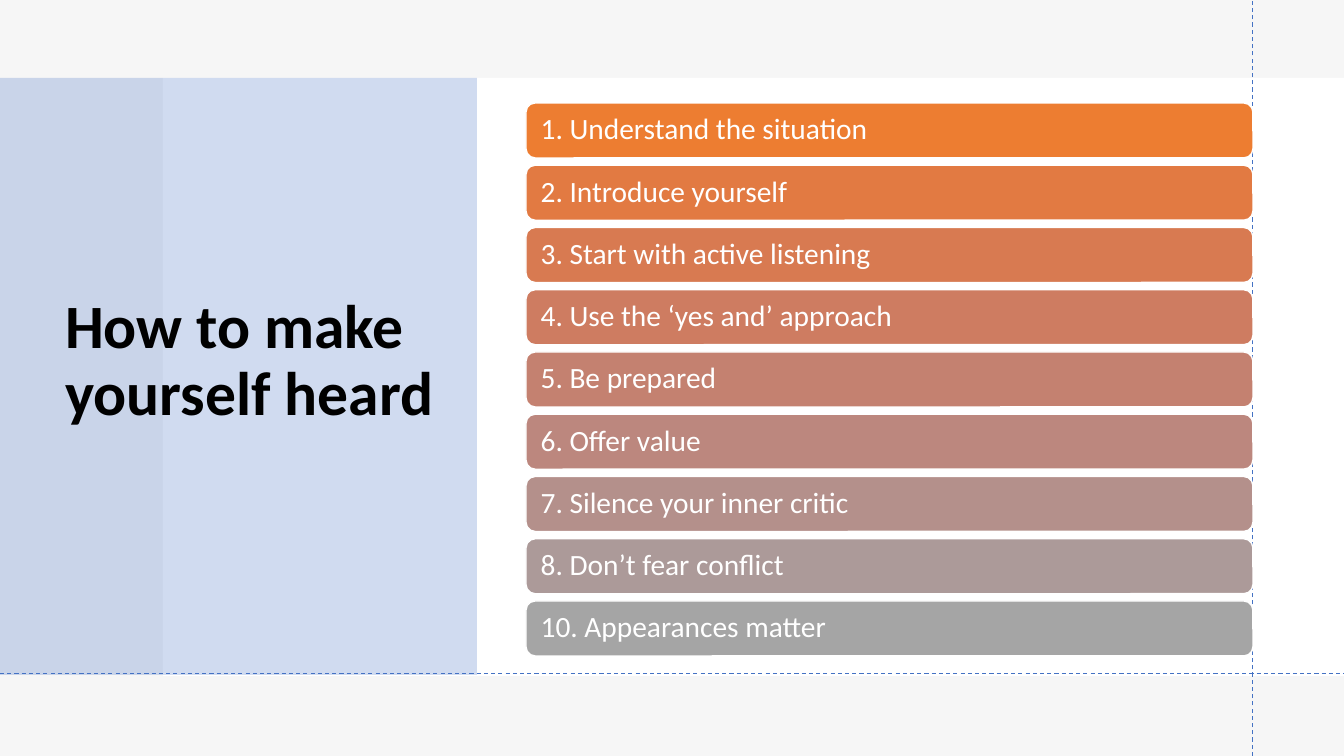
import pptx
import pptx.dml.color
import pptx.enum.dml
import pptx.enum.shapes
import pptx.enum.text
import pptx.oxml
import pptx.oxml.ns
import pptx.util

RGBColor = pptx.dml.color.RGBColor
ShapeType = pptx.enum.shapes.MSO_SHAPE
EMU_PER_PX = 914400 / 100.8
SLIDE_BOX = (0, 0, 1344, 756)

BLACK = RGBColor(0x00, 0x00, 0x00)
WHITE = RGBColor(0xFF, 0xFF, 0xFF)
PALE_GREY = RGBColor(0xF6, 0xF6, 0xF6)
BLUE = RGBColor(0x44, 0x72, 0xC4)

STEPS = [
    ("1. Understand the situation", RGBColor(0xED, 0x7D, 0x31)),
    ("2. Introduce yourself", RGBColor(0xE2, 0x7A, 0x42)),
    ("3. Start with active listening", RGBColor(0xD8, 0x7A, 0x51)),
    ("4. Use the ‘yes and’ approach", RGBColor(0xCE, 0x7C, 0x61)),
    ("5. Be prepared", RGBColor(0xC4, 0x81, 0x70)),
    ("6. Offer value", RGBColor(0xBC, 0x87, 0x7E)),
    ("7. Silence your inner critic", RGBColor(0xB4, 0x90, 0x8B)),
    ("8. Don’t fear conflict", RGBColor(0xAC, 0x9A, 0x99)),
    ("10. Appearances matter", RGBColor(0xA5, 0xA5, 0xA5)),
]


def px(length):
    """Turn a length in px into EMU."""
    return pptx.util.Emu(round(length * EMU_PER_PX))


def set_all(target, formats):
    """Set every attribute in a dict of format values."""
    for name, value in formats.items():
        setattr(target, name, value)


def add_block(slide, preset, box, color):
    """Add a flat filled shape without outline."""
    block = slide.shapes.add_shape(preset, *map(px, box))
    block.shadow.inherit = False
    block.fill.solid()
    block.fill.fore_color.rgb = color
    block.line.fill.background()
    return block


def write(shape, text, size, color, bold, inset):
    """Write one left-aligned, vertically centred paragraph."""
    frame = shape.text_frame
    frame.text = text
    set_all(frame, {
        "word_wrap": True,
        "auto_size": pptx.enum.text.MSO_AUTO_SIZE.NONE,
        "vertical_anchor": pptx.enum.text.MSO_ANCHOR.MIDDLE,
        "margin_left": px(inset),
        "margin_right": px(inset),
    })
    paragraph = frame.paragraphs[0]
    set_all(paragraph, {"alignment": pptx.enum.text.PP_ALIGN.LEFT, "line_spacing": 0.9})
    font = paragraph.runs[0].font
    set_all(font, {"name": "Calibri", "size": pptx.util.Pt(size), "bold": bold})
    font.color.rgb = color


def add_title_panel(slide, box):
    """Add the translucent blue panel with the slide title on it."""
    left, top, width, height = box
    panel = add_block(slide, ShapeType.RECTANGLE, box, BLUE)
    tint = panel.element.spPr.find(".//" + pptx.oxml.ns.qn("a:srgbClr"))
    tint.append(pptx.oxml.parse_xml(
        f'<a:alpha {pptx.oxml.ns.nsdecls("a")} val="25000"/>'))
    title = slide.shapes.title
    title.element.getparent().append(title.element)
    title_box = (left + 55, top - 3, width - 79, height - 23)
    set_all(title, dict(zip(("left", "top", "width", "height"), map(px, title_box))))
    write(title, "How to make yourself heard", 44, BLACK, True, 10)


def add_guides(slide, box, guide_x, guide_y):
    """Add the dashed vertical and horizontal guides across the box."""
    left, top, width, height = box
    for ends in ((guide_x, top + height, guide_x, top),
                 (left, guide_y, left + width, guide_y)):
        guide = slide.shapes.add_connector(
            pptx.enum.shapes.MSO_CONNECTOR.STRAIGHT, *map(px, ends))
        guide.line.color.rgb = BLUE
        set_all(guide.line, {"width": pptx.util.Pt(0.75),
                             "dash_style": pptx.enum.dml.MSO_LINE.DASH})
        guide.element.spPr.append(pptx.oxml.parse_xml(
            f'<a:effectLst {pptx.oxml.ns.nsdecls("a")}/>'))


def add_steps(slide, box):
    """Spread the step bars evenly over the height of the box."""
    left, top, width, height = box
    bar_height = 55
    pitch = (height - bar_height) / (len(STEPS) - 1)
    for index, (step, color) in enumerate(STEPS):
        bar = add_block(slide, ShapeType.ROUNDED_RECTANGLE,
                        (left, top + index * pitch, width, bar_height), color)
        bar.line.color.rgb = WHITE
        bar.line.width = pptx.util.Pt(1)
        write(bar, step, 21, WHITE, False, 12)


def main():
    """Build the slide and save it."""
    deck = pptx.Presentation()
    set_all(deck, {"slide_width": px(SLIDE_BOX[2]), "slide_height": px(SLIDE_BOX[3])})
    slide = deck.slides.add_slide(deck.slide_layouts[5])
    slide.background.fill.solid()
    slide.background.fill.fore_color.rgb = PALE_GREY
    add_block(slide, ShapeType.RECTANGLE, (163, 78, 1181, 598), WHITE)
    add_title_panel(slide, (0, 78, 477, 597))
    add_guides(slide, SLIDE_BOX, 1253, 674)
    add_steps(slide, (526, 103, 727, 553))
    deck.save("out.pptx")


if __name__ == "__main__":
    main()
